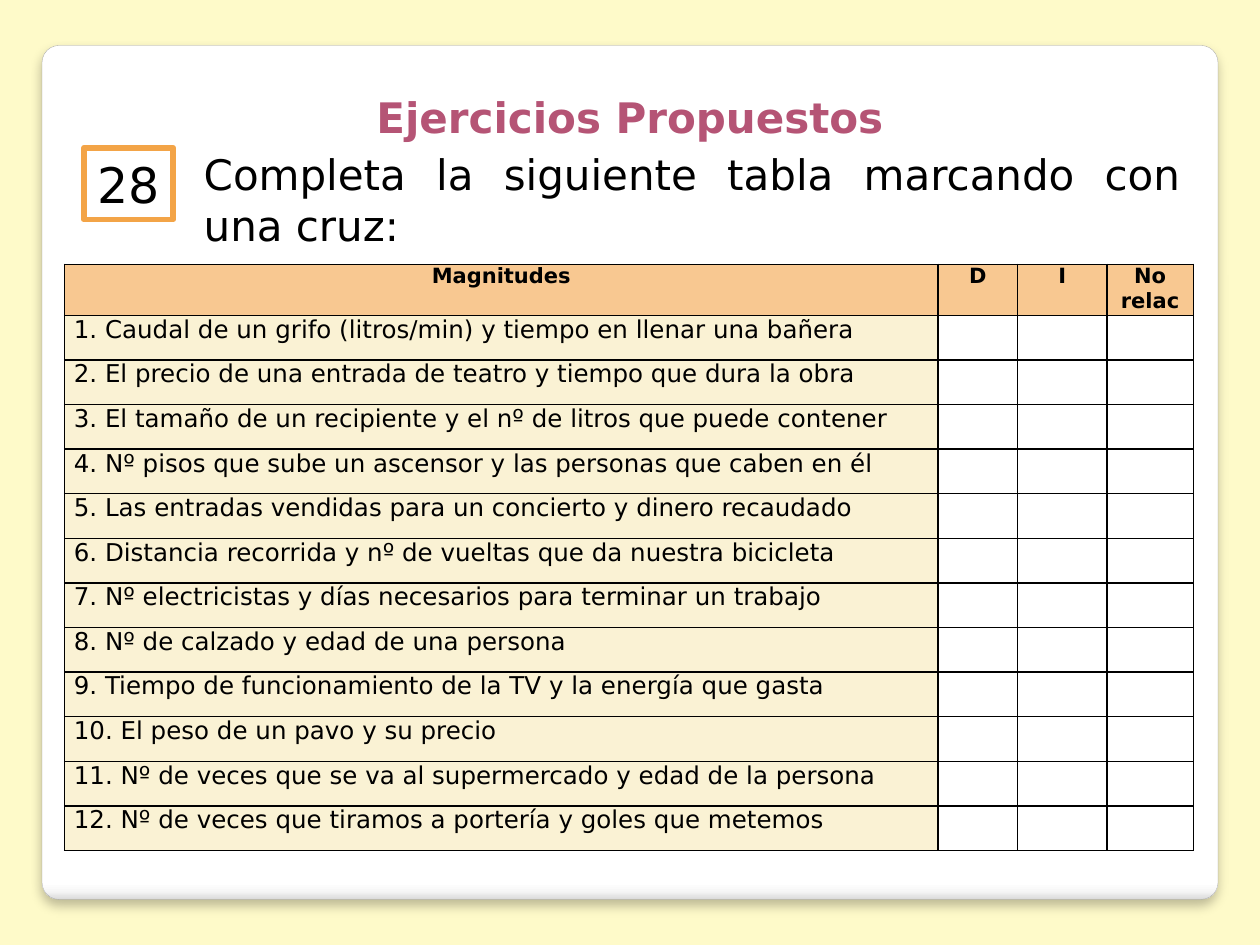
import pptx
import pptx.dml.color
import pptx.enum.shapes
import pptx.enum.text
import pptx.oxml
import pptx.oxml.ns
import pptx.util

Pt = pptx.util.Pt
RGBColor = pptx.dml.color.RGBColor
SHAPES = pptx.enum.shapes.MSO_SHAPE
ALIGN = pptx.enum.text.PP_ALIGN

FONT = "DejaVu Sans"
CREAM = RGBColor(0xFE, 0xFA, 0xC9)
WHITE = RGBColor(0xFF, 0xFF, 0xFF)
BLACK = RGBColor(0x00, 0x00, 0x00)
GREY = RGBColor(0xA4, 0xA4, 0xA4)
PLUM = RGBColor(0xB5, 0x54, 0x75)
ORANGE = RGBColor(0xF3, 0xA4, 0x47)
HEADER_FILL = RGBColor(0xF8, 0xC8, 0x91)
ROW_FILL = RGBColor(0xFA, 0xF2, 0xD4)
CARD_STOPS = [
    (0, WHITE),
    (98, WHITE),
    (99, RGBColor(0xF7, 0xF7, 0xF7)),
    (100, RGBColor(0xDA, 0xDA, 0xDA)),
]

HEADERS = ["Magnitudes", "D", "I", "No relac"]
COLUMN_WIDTHS = [499, 45.5, 51, 49.5]
HEADER_HEIGHT = 29.2
ROW_HEIGHT = 25.5
MAGNITUDES = [
    "Caudal de un grifo (litros/min) y tiempo en llenar una bañera",
    "El precio de una entrada de teatro y tiempo que dura la obra",
    "El tamaño de un recipiente y el nº de litros que puede contener",
    "Nº pisos que sube un ascensor y las personas que caben en él",
    "Las entradas vendidas para un concierto y dinero recaudado",
    "Distancia recorrida y nº de vueltas que da nuestra bicicleta",
    "Nº electricistas y días necesarios para terminar un trabajo",
    "Nº de calzado y edad de una persona",
    "Tiempo de funcionamiento de la TV y la energía que gasta",
    "El peso de un pavo y su precio",
    "Nº de veces que se va al supermercado y edad de la persona",
    "Nº de veces que tiramos a portería y goles que metemos",
]


def xml(tag, body, attributes=""):
    """Parse one DrawingML element."""
    namespace = pptx.oxml.ns.nsdecls("a")
    return pptx.oxml.parse_xml(f"<a:{tag} {namespace} {attributes}>{body}</a:{tag}>")


def write(frame, text, size, align, color=BLACK, bold=False):
    frame.text = text
    paragraph = frame.paragraphs[0]
    paragraph.alignment = align
    for run in paragraph.runs:
        run.font.name = FONT
        run.font.size = Pt(size)
        run.font.bold = bold
        run.font.color.rgb = color
    return paragraph


def add_card(slide, left, top, width, height):
    card = slide.shapes.add_shape(
        SHAPES.ROUNDED_RECTANGLE, Pt(left), Pt(top), Pt(width), Pt(height))
    card.adjustments[0] = 0.02
    card.line.color.rgb = GREY
    card.line.width = Pt(0.16)
    stops = "".join(
        f'<a:gs pos="{position * 1000}"><a:srgbClr val="{color}"/></a:gs>'
        for position, color in CARD_STOPS)
    properties = card.line._ln.getparent()
    card.line._ln.addprevious(
        xml("gradFill", f'<a:gsLst>{stops}</a:gsLst><a:lin ang="5400000" scaled="0"/>'))
    properties.append(xml(
        "effectLst",
        f'<a:outerShdw blurRad="{Pt(6)}" dist="{Pt(4)}" dir="5400000" algn="t" '
        'rotWithShape="0"><a:srgbClr val="000000"><a:alpha val="25000"/>'
        '</a:srgbClr></a:outerShdw>'))


def add_title(slide, left, top, width, height):
    title = slide.shapes.add_textbox(Pt(left), Pt(top), Pt(width), Pt(height))
    title.text_frame.word_wrap = True
    write(title.text_frame, "Ejercicios Propuestos", 24, ALIGN.CENTER, PLUM, True)


def add_number(slide, left, top, width, height):
    number = slide.shapes.add_shape(
        SHAPES.RECTANGLE, Pt(left), Pt(top), Pt(width), Pt(height))
    number.shadow.inherit = False
    number.fill.solid()
    number.fill.fore_color.rgb = WHITE
    number.line.color.rgb = ORANGE
    number.line.width = Pt(3.35)
    number.text_frame.word_wrap = False
    write(number.text_frame, "28", 28, ALIGN.CENTER)


def add_statement(slide, left, top, width, height):
    statement = slide.shapes.add_textbox(Pt(left), Pt(top), Pt(width), Pt(height))
    statement.fill.solid()
    statement.fill.fore_color.rgb = WHITE
    statement.text_frame.word_wrap = True
    write(statement.text_frame, "Completa la siguiente tabla marcando con una cruz:",
          24, ALIGN.JUSTIFY)


def format_cell(cell, color):
    cell.margin_left = cell.margin_right = Pt(5.2)
    cell.margin_top = cell.margin_bottom = 0
    properties = cell._tc.get_or_add_tcPr()
    for side in ("lnL", "lnR", "lnT", "lnB"):
        properties.append(xml(
            side, f'<a:solidFill><a:srgbClr val="{BLACK}"/></a:solidFill>',
            f'w="{Pt(1)}"'))
    cell.fill.solid()
    cell.fill.fore_color.rgb = color


def add_magnitudes_table(slide, left, top):
    row_count = len(MAGNITUDES) + 1
    height = HEADER_HEIGHT + len(MAGNITUDES) * ROW_HEIGHT
    table = slide.shapes.add_table(
        row_count, len(HEADERS), Pt(left), Pt(top),
        Pt(sum(COLUMN_WIDTHS)), Pt(height)).table
    table.first_row = table.horz_banding = False
    for column, width in zip(table.columns, COLUMN_WIDTHS):
        column.width = Pt(width)
    for index, row in enumerate(table.rows):
        row.height = Pt(ROW_HEIGHT if index else HEADER_HEIGHT)
        for column, cell in enumerate(row.cells):
            if index == 0:
                format_cell(cell, HEADER_FILL)
                write(cell.text_frame, HEADERS[column], 12, ALIGN.CENTER, bold=True)
            elif column == 0:
                format_cell(cell, ROW_FILL)
                write(cell.text_frame, f"{index}. {MAGNITUDES[index - 1]}", 14,
                      ALIGN.LEFT).space_after = Pt(3)
            else:
                format_cell(cell, WHITE)


def main():
    presentation = pptx.Presentation()
    presentation.slide_width = Pt(720)
    presentation.slide_height = Pt(540)
    slide = presentation.slides.add_slide(presentation.slide_layouts[6])
    slide.background.fill.solid()
    slide.background.fill.fore_color.rgb = CREAM
    add_card(slide, 24, 26, 672, 488)
    add_title(slide, 28, 48.5, 664, 36)
    add_number(slide, 48, 84.5, 51, 41)
    add_statement(slide, 109.3, 81.5, 572.4, 65.5)
    add_magnitudes_table(slide, 37, 151)
    presentation.save("out.pptx")


if __name__ == "__main__":
    main()
